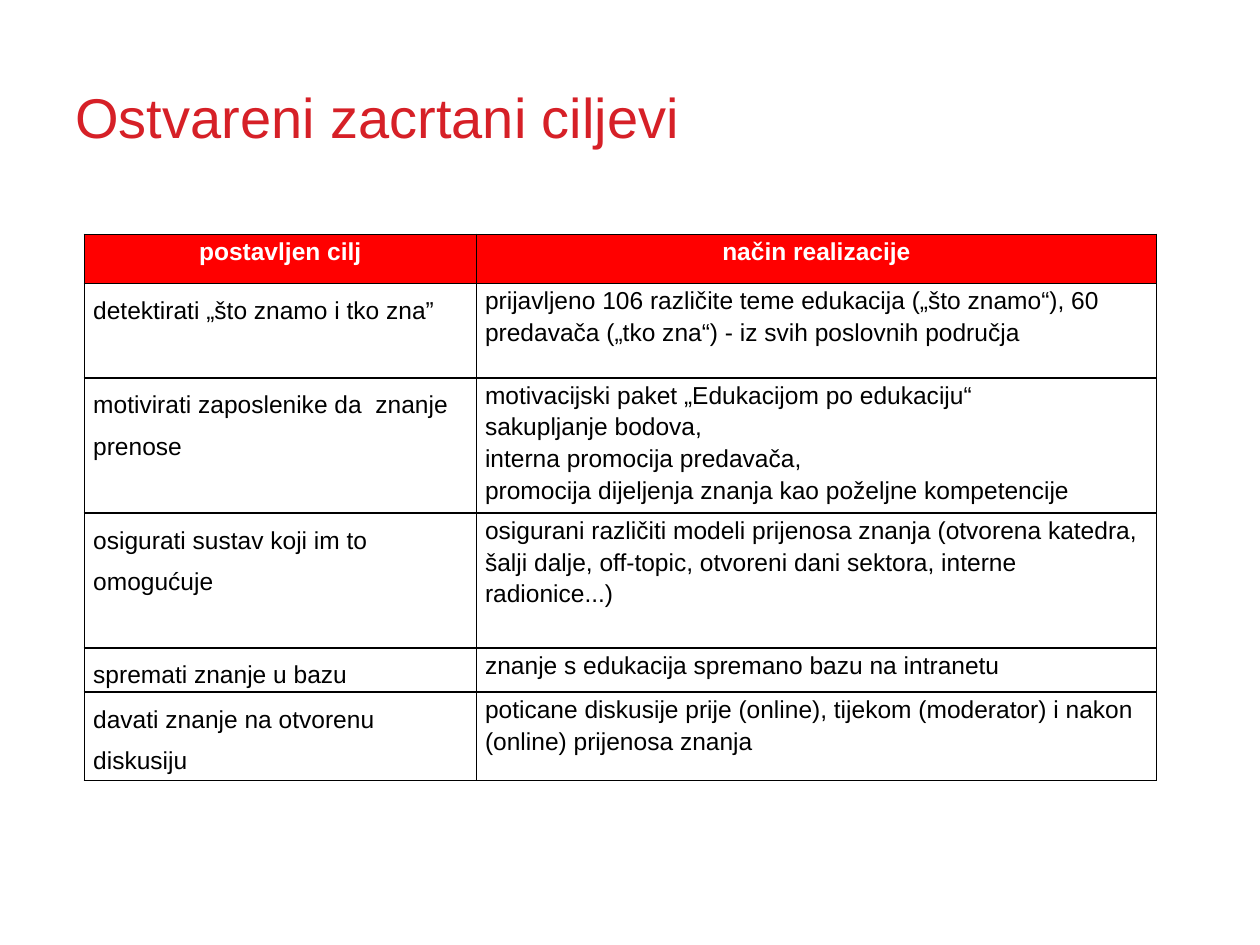
import pptx
import pptx.dml.color
import pptx.enum.text
import pptx.oxml
import pptx.oxml.ns
import pptx.util
from pptx.util import Inches

COLORS = {
    "title": "D62027",
    "header": "FF0000",
    "header_text": "FFFFFF",
    "body": "FFFFFF",
    "text": "000000",
    "border": "000000",
}
ALIGN = pptx.enum.text.PP_ALIGN
ANCHOR = pptx.enum.text.MSO_ANCHOR
FONT = {"name": "Arial", "size": pptx.util.Pt(14), "bold": False}
HEADER_PARAGRAPH = {"alignment": ALIGN.CENTER, "line_spacing": 1.15}
GOAL_PARAGRAPH = {"line_spacing": 1.5, "space_after": pptx.util.Pt(6)}
RESULT_PARAGRAPH = {"line_spacing": 1.15}
CELL_MARGINS = {
    "margin_left": Inches(0.07),
    "margin_right": Inches(0.07),
    "margin_top": 0,
    "margin_bottom": 0,
}

COLUMN_WIDTHS = [3.11, 5.4]
HEADER_HEIGHT = 0.39
HEADERS = ["postavljen cilj", "način realizacije"]
# Row height, goal, lines telling how it was achieved
GOALS = [
    (0.75, "detektirati „što znamo i tko zna”",
     ["prijavljeno 106 različite teme edukacija („što znamo“), 60 predavača "
      "(„tko zna“) - iz svih poslovnih područja"]),
    (1.01, "motivirati zaposlenike da  znanje prenose",
     ["motivacijski paket „Edukacijom po edukaciju“",
      "sakupljanje bodova,",
      "interna promocija predavača,",
      "promocija dijeljenja znanja kao poželjne kompetencije"]),
    (1.07, "osigurati sustav koji im to omogućuje",
     ["osigurani različiti modeli prijenosa znanja (otvorena katedra, šalji "
      "dalje, off-topic, otvoreni dani sektora, interne radionice...)"]),
    (0.33, "spremati znanje u bazu",
     ["znanje s edukacija spremano bazu na intranetu"]),
    (0.66, "davati znanje na otvorenu diskusiju",
     ["poticane diskusije prije (online), tijekom (moderator) i nakon "
      "(online) prijenosa znanja"]),
]


def rgb(name):
    return pptx.dml.color.RGBColor.from_string(COLORS[name])


def apply_format(target, values):
    for name, value in values.items():
        setattr(target, name, value)


def write_lines(text_frame, lines, paragraph_format, font_format, color):
    for index, line in enumerate(lines):
        paragraph = text_frame.add_paragraph() if index else text_frame.paragraphs[0]
        apply_format(paragraph, paragraph_format)
        run = paragraph.add_run()
        run.text = line
        apply_format(run.font, font_format)
        run.font.color.rgb = rgb(color)


def add_borders(cell):
    properties = cell._tc.get_or_add_tcPr()
    for position, side in enumerate(("lnL", "lnR", "lnT", "lnB")):
        properties.insert(position, pptx.oxml.parse_xml(
            f'<a:{side} {pptx.oxml.ns.nsdecls("a")} w="12700"><a:solidFill>'
            f'<a:srgbClr val="{COLORS["border"]}"/></a:solidFill></a:{side}>'))


def fill_cell(cell, lines, paragraph_format, font_format, color, fill):
    apply_format(cell, CELL_MARGINS)
    cell.fill.solid()
    cell.fill.fore_color.rgb = rgb(fill)
    add_borders(cell)
    write_lines(cell.text_frame, lines, paragraph_format, font_format, color)


def add_title(slide, left, top, width, height):
    text_frame = slide.shapes.add_textbox(left, top, width, height).text_frame
    apply_format(text_frame, {"word_wrap": True, "vertical_anchor": ANCHOR.MIDDLE})
    write_lines(text_frame, ["Ostvareni zacrtani ciljevi"], {},
                {**FONT, "size": pptx.util.Pt(32)}, "title")


def add_goals_table(slide, left, top):
    heights = [HEADER_HEIGHT] + [goal[0] for goal in GOALS]
    table = slide.shapes.add_table(
        len(heights), len(COLUMN_WIDTHS), left, top,
        Inches(sum(COLUMN_WIDTHS)), Inches(sum(heights))).table
    for column, width in zip(table.columns, COLUMN_WIDTHS):
        column.width = Inches(width)
    for row, height in zip(table.rows, heights):
        row.height = Inches(height)

    for index, header in enumerate(HEADERS):
        fill_cell(table.cell(0, index), [header], HEADER_PARAGRAPH,
                  {**FONT, "bold": True}, "header_text", "header")
    for index, (_, goal, results) in enumerate(GOALS, start=1):
        fill_cell(table.cell(index, 0), [goal], GOAL_PARAGRAPH, FONT, "text", "body")
        fill_cell(table.cell(index, 1), results, RESULT_PARAGRAPH, FONT, "text", "body")


def main():
    presentation = pptx.Presentation()
    presentation.slide_width = Inches(10)
    presentation.slide_height = Inches(7.5)
    slide = presentation.slides.add_slide(presentation.slide_layouts[6])
    add_title(slide, Inches(0.5), Inches(0.3), Inches(9), Inches(1.25))
    add_goals_table(slide, Inches(0.67), Inches(1.86))
    presentation.save("out.pptx")


if __name__ == "__main__":
    main()
